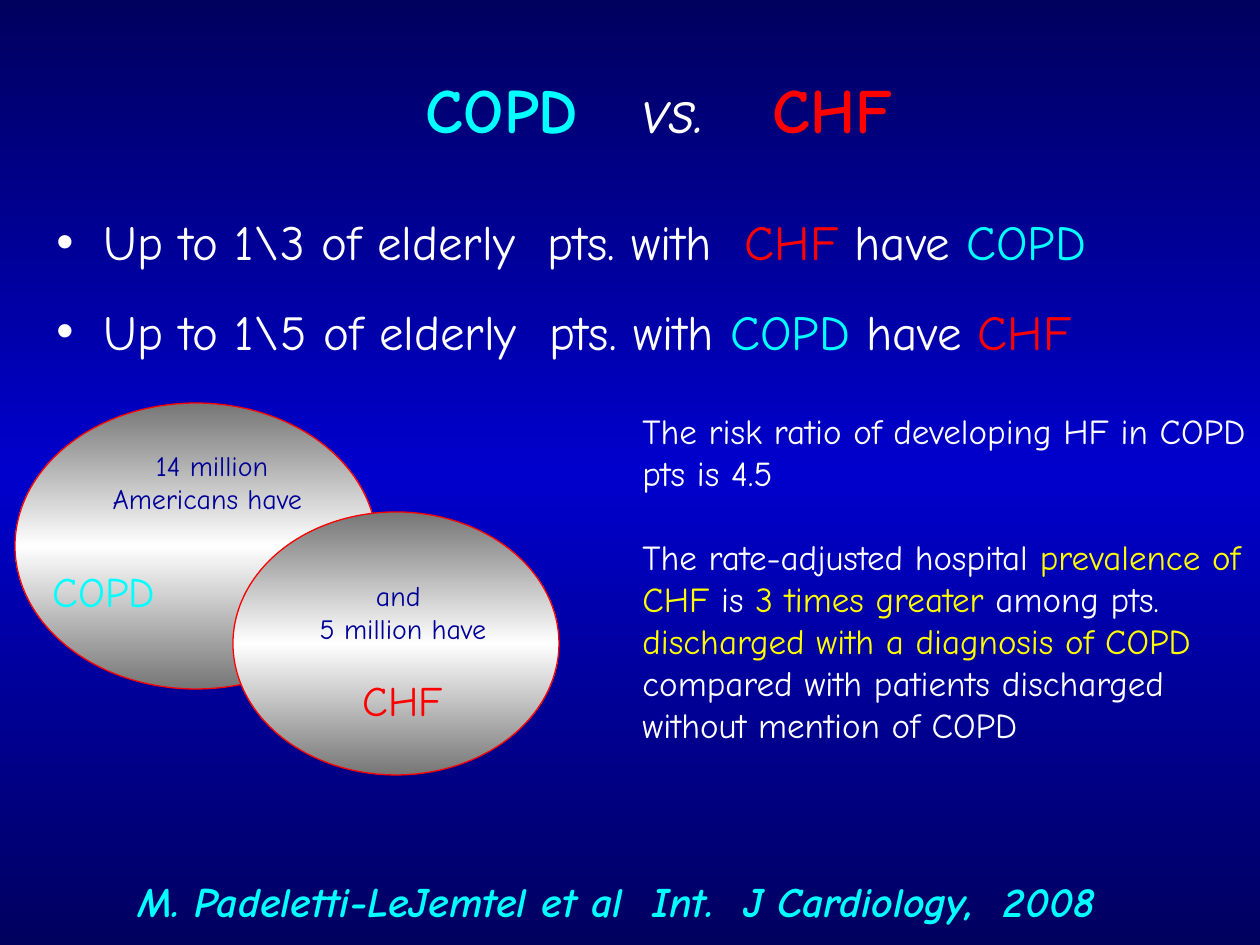
"""Build the COPD versus CHF slide with overlapping prevalence ellipses."""
from copy import deepcopy
from dataclasses import dataclass

from lxml.etree import SubElement
from pptx import Presentation
from pptx.dml.color import RGBColor
from pptx.enum.shapes import MSO_SHAPE
from pptx.enum.text import MSO_ANCHOR, PP_ALIGN
from pptx.oxml.ns import qn
from pptx.util import Emu, Pt


@dataclass(frozen=True)
class Theme:
    font: str = "Comic Neue"
    white: str = "FFFFFF"
    cyan: str = "00FFFF"
    red: str = "FF0000"
    yellow: str = "FFFF00"
    navy: str = "000099"
    background_edge: str = "00005E"
    background_middle: str = "0000CC"
    ellipse_edge: str = "767676"
    title: int = 36
    bullet: int = 28
    label: int = 24
    body: int = 20
    caption: int = 16


def px(value):
    return Emu(round(value * 914400 / 126))


class SlideBuilder:
    def __init__(self, presentation, theme):
        self.theme = theme
        self.slide = presentation.slides.add_slide(presentation.slide_layouts[6])

    def gradient(self, fill, element, edge, middle):
        fill.gradient()
        fill.gradient_angle = 270
        stops = next(element.iter(qn("a:gsLst")))
        stops.append(deepcopy(stops[0]))
        for index, (stop, color) in enumerate(zip(fill.gradient_stops, (edge, middle, edge))):
            stop.color.rgb = RGBColor.from_string(color)
            stop.position = index / 2

    def background(self):
        self.gradient(self.slide.background.fill, self.slide.element,
                      self.theme.background_edge, self.theme.background_middle)

    def ellipse(self, left, top, width, height):
        shape = self.slide.shapes.add_shape(
            MSO_SHAPE.OVAL, px(left), px(top), px(width), px(height))
        shape.shadow.inherit = False
        self.gradient(shape.fill, shape.element, self.theme.ellipse_edge, self.theme.white)
        shape.line.color.rgb = RGBColor.from_string(self.theme.red)
        shape.line.width = Pt(0.75)

    def text(self, box, paragraphs, size, align=PP_ALIGN.LEFT, gap=0):
        """Add a text box from paragraphs of (text, colour, styles) runs."""
        shape = self.slide.shapes.add_textbox(*map(px, box))
        frame = shape.text_frame
        frame.word_wrap = True
        for index, runs in enumerate(paragraphs):
            paragraph = frame.add_paragraph() if index else frame.paragraphs[0]
            paragraph.alignment = align
            if index and gap:
                paragraph.space_before = Pt(gap)
            for text, color, *styles in runs:
                run = paragraph.add_run()
                run.text = text
                run.font.name = self.theme.font
                run.font.size = Pt(size)
                run.font.bold = "bold" in styles
                run.font.italic = "italic" in styles
                run.font.color.rgb = RGBColor.from_string(color)
        return frame

    def title(self, box, runs, inset, stops):
        frame = self.text(box, [runs], self.theme.title)
        frame.vertical_anchor = MSO_ANCHOR.MIDDLE
        frame.margin_left = px(inset)
        properties = frame.paragraphs[0]._p.get_or_add_pPr()
        tabs = SubElement(properties, qn("a:tabLst"))
        for stop in stops:
            SubElement(tabs, qn("a:tab"), pos=str(px(stop)), algn="l")

    def bullets(self, box, paragraphs):
        frame = self.text(box, paragraphs, self.theme.bullet, gap=5.6)
        for paragraph in frame.paragraphs:
            properties = paragraph._p.get_or_add_pPr()
            properties.set("marL", str(px(47)))
            properties.set("indent", str(-px(47)))
            SubElement(properties, qn("a:buFont"), typeface="Arial")
            SubElement(properties, qn("a:buChar"), char="•")
            paragraph.line_spacing = 1.35


def main():
    theme = Theme()
    white, cyan, red, yellow, navy = (
        theme.white, theme.cyan, theme.red, theme.yellow, theme.navy)
    presentation = Presentation()
    presentation.slide_width, presentation.slide_height = px(1260), px(945)
    builder = SlideBuilder(presentation, theme)
    builder.background()

    builder.title((126, 71, 1071, 74), [
        ("COPD\t", cyan, "bold"), ("vs.\t", white, "italic"), ("CHF", red, "bold"),
    ], inset=300, stops=(217, 347))
    builder.bullets((44, 185, 1181, 169), [
        [("Up to 1\\3 of elderly  pts. with  ", white), ("CHF", red),
         (" have ", white), ("COPD", cyan)],
        [("Up to 1\\5 of elderly  pts. with ", white), ("COPD", cyan),
         (" have ", white), ("CHF", red)],
    ])

    builder.ellipse(15, 403, 362, 286)
    builder.ellipse(233, 512, 326, 263)
    builder.text((84, 442, 256, 81), [[("14 million Americans have ", navy)]],
                 theme.caption, PP_ALIGN.CENTER)
    builder.text((40, 559, 178, 63), [[("COPD", cyan)]], theme.label)
    builder.text((297, 572, 212, 81), [[("and ", navy)], [("5 million have", navy)]],
                 theme.caption, PP_ALIGN.CENTER)
    builder.text((350, 668, 132, 63), [[("CHF", red)]], theme.label)

    builder.text((0, 869, 1234, 63), [
        [("M. Padeletti-LeJemtel et al  Int.  J Cardiology,  2008", cyan, "bold", "italic")],
    ], theme.label, PP_ALIGN.CENTER)
    builder.text((630, 403, 630, 391), [
        [("The risk ratio of developing HF in COPD pts is 4.5", white)],
        [("The rate-adjusted hospital ", white), ("prevalence of CHF ", yellow),
         ("is ", white), ("3 times greater ", yellow), ("among pts. ", white),
         ("discharged with a diagnosis of COPD", yellow),
         (" compared with patients discharged without mention of COPD", white)],
    ], theme.body, gap=24)
    presentation.save("out.pptx")


if __name__ == "__main__":
    main()
